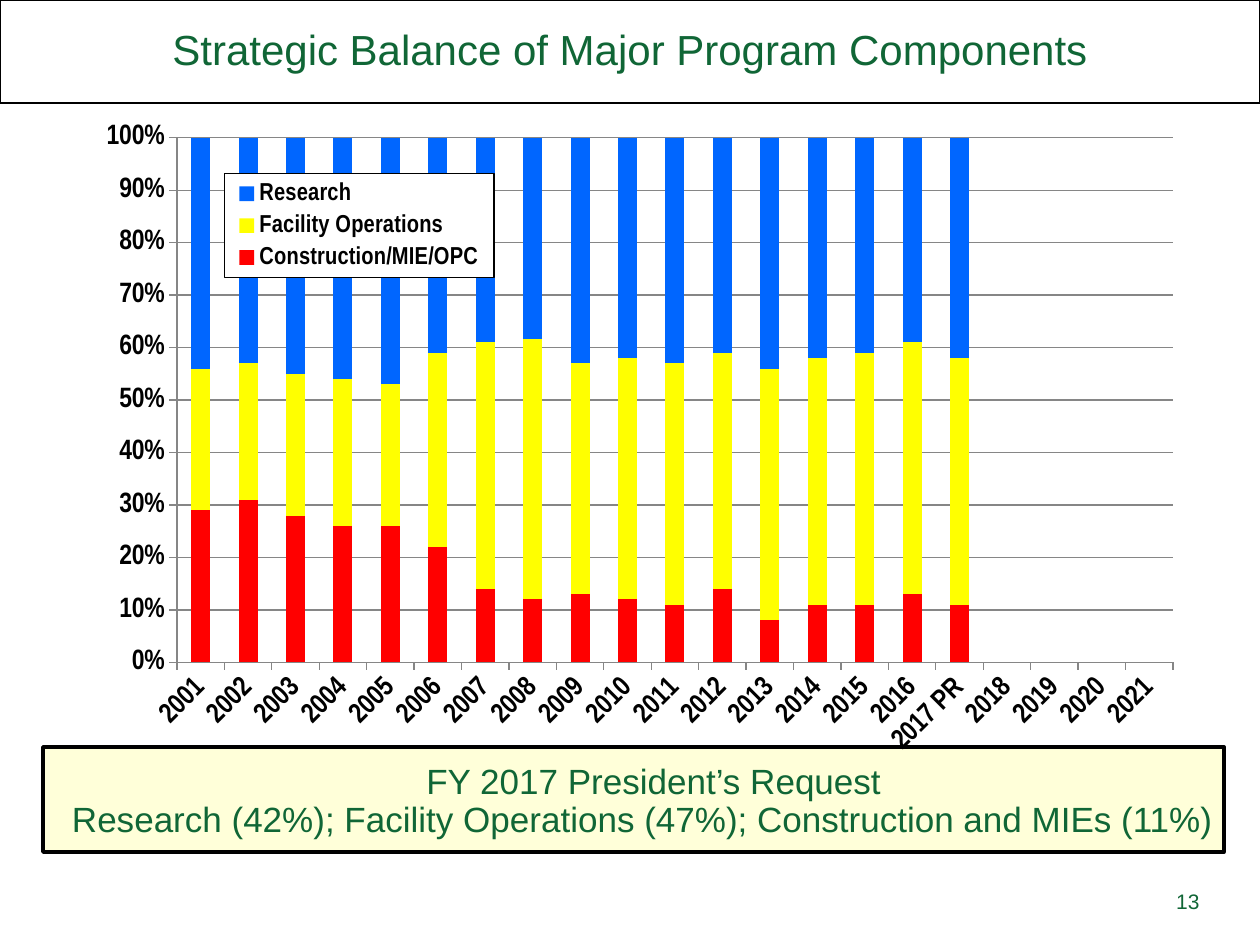
"""Build a slide charting the yearly balance of major program components."""
from lxml.etree import SubElement, fromstring
from pptx import Presentation
from pptx.chart.data import CategoryChartData
from pptx.dml.color import RGBColor
from pptx.enum.chart import XL_CHART_TYPE as ChartType, XL_LEGEND_POSITION as LegendPosition
from pptx.enum.chart import XL_TICK_MARK as TickMark
from pptx.enum.shapes import MSO_SHAPE as Preset
from pptx.enum.text import MSO_ANCHOR as Anchor, PP_ALIGN as Align
from pptx.oxml.ns import nsdecls, qn
from pptx.util import Inches, Pt

TITLE = "Strategic Balance of Major Program Components"
REQUEST = "FY 2017 President’s Request"
SHARES = "Research (42%); Facility Operations (47%); Construction and MIEs (11%)"
PAGE = "13"
YEARS = [*map(str, range(2001, 2017)), "2017 PR", *map(str, range(2018, 2022))]
COMPONENTS = [
    ("Construction/MIE/OPC", "FF0000",
     [29, 31, 28, 26, 26, 22, 14, 12, 13, 12, 11, 14, 8, 11, 11, 13, 11]),
    ("Facility Operations", "FFFF00",
     [27, 26, 27, 28, 27, 37, 47, 49, 44, 46, 46, 45, 48, 47, 48, 48, 47]),
    ("Research", "0066FF",
     [44, 43, 45, 46, 47, 41, 39, 38, 43, 42, 43, 41, 44, 42, 41, 39, 42]),
]
PLACES = {
    "title": (0, 0, 1260, 103),
    "panel": (43, 747, 1181, 105),
    "request": (13, 753, 1235, 115),
    "chart": (57, 121, 1153, 644),
    "plot": (177, 138, 996, 525),
    "legend": (224, 174, 270, 104),
    "page": (1159, 876, 53, 50),
}
THEME = {
    "line": "000000", "grid": "868686", "panel": "FFFFD9", "paper": "FFFFFF",
    "title": {"name": "Arial", "size": Pt(24), "bold": False, "color": "106636"},
    "request": {"name": "Arial", "size": Pt(20), "color": "106636"},
    "page": {"name": "Arial", "size": Pt(12), "color": "106636"},
    "chart": {"name": "Calibri", "size": Pt(10), "color": "000000"},
    "axis": {"name": "Arial Narrow", "size": Pt(16), "bold": True, "color": "000000"},
    "legend": {"name": "Arial Narrow", "size": Pt(14), "bold": True, "color": "000000"},
}
PX = Inches(1) / 126


def emu(place):
    return [round(length * PX) for length in PLACES[place]]


def apply(target, values):
    for name, value in values.items():
        setattr(target, name, value)


def set_font(font, role):
    values = dict(THEME[role])
    font.color.rgb = RGBColor.from_string(values.pop("color"))
    apply(font, values)


def set_line(line, color, width):
    line.color.rgb = RGBColor.from_string(color)
    line.width = Pt(width)


def set_fill(fill, color):
    fill.solid()
    fill.fore_color.rgb = RGBColor.from_string(color)


def chart_layout(place, inner=False):
    left, top, width, height = PLACES["chart"]
    x, y, w, h = PLACES[place]
    layout = fromstring(f'<c:layout {nsdecls("c")}><c:manualLayout/></c:layout>')
    settings = {"layoutTarget": "inner"} if inner else {}
    settings |= {"xMode": "edge", "yMode": "edge",
                 "x": round((x - left) / width, 3), "y": round((y - top) / height, 3),
                 "w": round(w / width, 3), "h": round(h / height, 3)}
    for tag, value in settings.items():
        SubElement(layout[0], qn(f"c:{tag}")).set("val", str(value))
    return layout


def drop_layout(parent):
    for layout in parent.findall(qn("c:layout")):
        parent.remove(layout)


def add_title(slide):
    title = slide.shapes.title
    apply(title, dict(zip(("left", "top", "width", "height"), emu("title"))))
    set_line(title.line, THEME["line"], 0.75)
    apply(title.text_frame, {"text": TITLE, "vertical_anchor": Anchor.MIDDLE, "word_wrap": True})
    heading = title.text_frame.paragraphs[0]
    apply(heading, {"alignment": Align.CENTER, "line_spacing": 0.95})
    set_font(heading.runs[0].font, "title")


def add_text(slide, role, lines, anchor):
    frame = slide.shapes.add_textbox(*emu(role)).text_frame
    apply(frame, {"text": "\n".join(text for text, _ in lines),
                  "word_wrap": True, "vertical_anchor": anchor})
    for paragraph, (_, layout) in zip(frame.paragraphs, lines):
        apply(paragraph, layout)
        set_font(paragraph.runs[0].font, role)
    return frame


def add_request(slide):
    panel = slide.shapes.add_shape(Preset.RECTANGLE, *emu("panel"))
    panel.shadow.inherit = False
    set_fill(panel.fill, THEME["panel"])
    set_line(panel.line, THEME["line"], 2)
    request = add_text(slide, "request", [
        (REQUEST, {"alignment": Align.CENTER}),
        (SHARES, {"alignment": Align.LEFT, "line_spacing": Pt(18), "space_before": Pt(4)}),
    ], Anchor.TOP)
    for paragraph in request.paragraphs:
        paragraph._p.get_or_add_pPr().set("marL", str(Inches(0.37)))


def add_balance(slide):
    data = CategoryChartData()
    data.categories = YEARS
    for name, _, shares in COMPONENTS:
        data.add_series(name, shares + [None] * (len(YEARS) - len(shares)))
    chart = slide.shapes.add_chart(ChartType.COLUMN_STACKED_100, *emu("chart"), data).chart
    chart.has_title = False
    set_font(chart.font, "chart")
    bars = chart.plots[0]
    apply(bars, {"gap_width": 150, "overlap": 100, "vary_by_categories": False})
    for series, (_, color, _) in zip(bars.series, COMPONENTS):
        set_fill(series.format.fill, color)

    years, percent = chart.category_axis, chart.value_axis
    for axis in (years, percent):
        set_font(axis.tick_labels.font, "axis")
        set_line(axis.format.line, THEME["grid"], 0.75)
        axis.major_tick_mark = TickMark.OUTSIDE
    years._element.find(qn("c:txPr")).find(qn("a:bodyPr")).set("rot", "-2700000")
    apply(percent, {"minimum_scale": 0, "maximum_scale": 1, "major_unit": 0.1,
                    "has_major_gridlines": True})
    apply(percent.tick_labels, {"number_format": "0%", "number_format_is_linked": False})
    set_line(percent.major_gridlines.format.line, THEME["grid"], 0.75)

    plot_area = chart._chartSpace.chart.plotArea
    drop_layout(plot_area)
    plot_area.insert(0, chart_layout("plot", inner=True))
    add_legend(chart)


def add_legend(chart):
    chart.has_legend = True
    legend = chart.legend
    apply(legend, {"position": LegendPosition.RIGHT, "include_in_layout": True})
    set_font(legend.font, "legend")
    element = legend._element
    drop_layout(element)
    element.find(qn("c:legendPos")).addnext(chart_layout("legend"))
    element.find(qn("c:overlay")).addnext(fromstring(
        f'<c:spPr {nsdecls("c", "a")}>'
        f'<a:solidFill><a:srgbClr val="{THEME["paper"]}"/></a:solidFill>'
        f'<a:ln w="{Pt(0.75)}"><a:solidFill><a:srgbClr val="{THEME["line"]}"/></a:solidFill></a:ln>'
        '</c:spPr>'))


def main():
    deck = Presentation()
    apply(deck, {"slide_width": Inches(10), "slide_height": Inches(7.5)})
    slide = deck.slides.add_slide(deck.slide_layouts[5])
    add_title(slide)
    add_request(slide)
    add_balance(slide)
    add_text(slide, "page", [(PAGE, {"alignment": Align.RIGHT})], Anchor.MIDDLE)
    deck.save("out.pptx")


if __name__ == "__main__":
    main()
